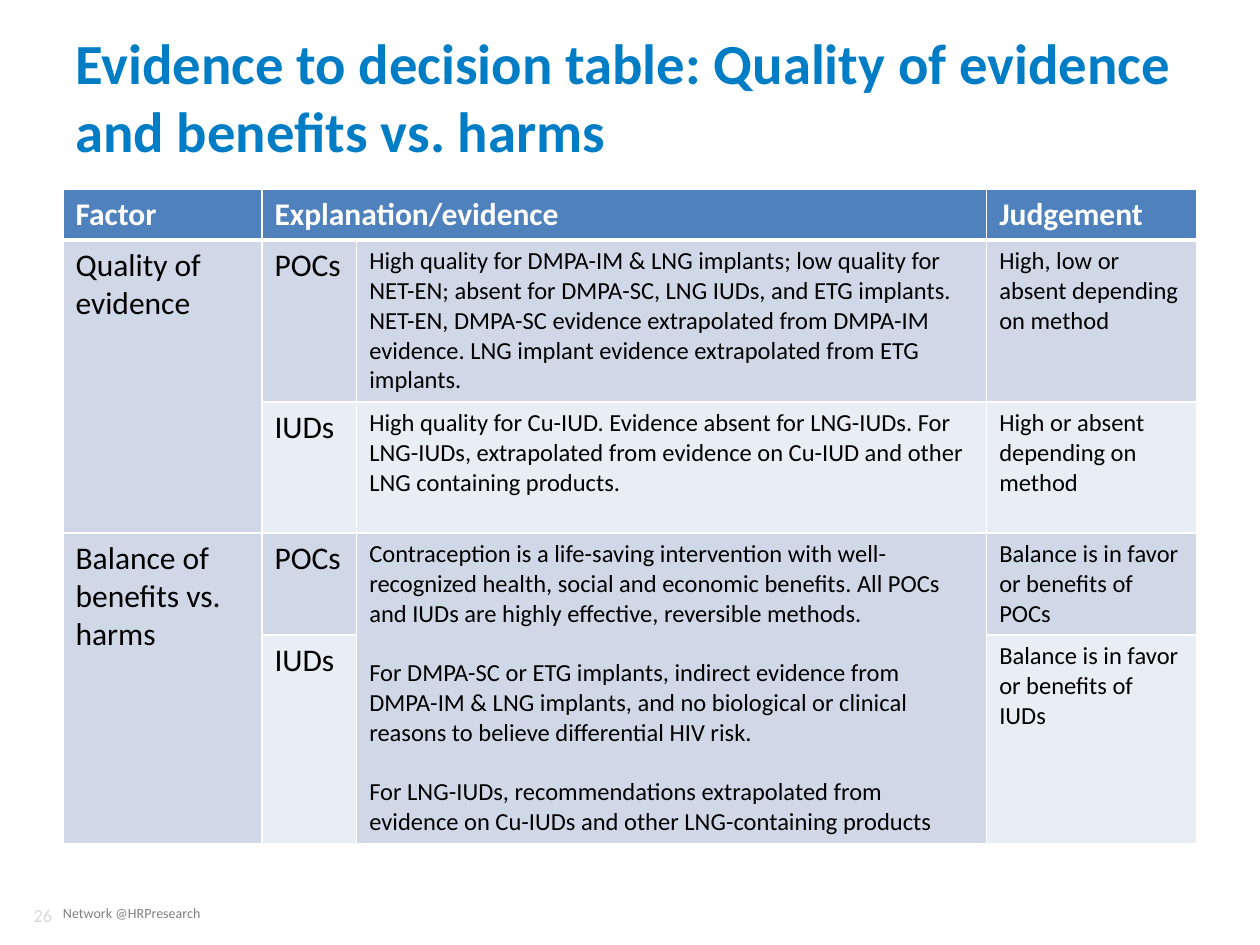
from lxml import etree
from pptx import Presentation
from pptx import util as u
from pptx.dml.color import RGBColor
from pptx.enum import text as t
from pptx.oxml import ns

TITLE = "Evidence to decision table: Quality of evidence and benefits vs. harms"
PAGE_NUMBER = "26"
HANDLE = "Network @HRPresearch"
HEADINGS = ["Factor", "Explanation/evidence", None, "Judgement"]
FINDINGS = [
    ["Quality of evidence", "POCs",
     "High quality for DMPA-IM & LNG implants; low quality for NET-EN; absent for DMPA-SC, "
     "LNG IUDs, and ETG implants. NET-EN, DMPA-SC evidence extrapolated from DMPA-IM evidence. "
     "LNG implant evidence extrapolated from ETG implants.",
     "High, low or absent depending on method"],
    [None, "IUDs",
     "High quality for Cu-IUD. Evidence absent for LNG-IUDs. For LNG-IUDs, extrapolated from "
     "evidence on Cu-IUD and other LNG containing products.",
     "High or absent depending on method"],
    ["Balance of benefits vs. harms", "POCs",
     "Contraception is a life-saving intervention with well-recognized health, social and "
     "economic benefits. All POCs and IUDs are highly effective, reversible methods.\n"
     "For DMPA-SC or ETG implants, indirect evidence from DMPA-IM & LNG implants, and no "
     "biological or clinical reasons to believe differential HIV risk.\n"
     "For LNG-IUDs, recommendations extrapolated from evidence on Cu-IUDs and other "
     "LNG-containing products",
     "Balance is in favor or benefits of POCs"],
    [None, "IUDs", None, "Balance is in favor or benefits of IUDs"],
]
MERGES = [((0, 1), (0, 2)), ((1, 0), (2, 0)), ((3, 0), (4, 0)), ((3, 2), (4, 2))]
COLUMN_WIDTHS = [4.01, 1.91, 12.7, 4.24]
ROW_HEIGHTS = [1.03, 3.26, 2.64, 2.06, 4.21]
HEADER_FILL, DARK_BAND, LIGHT_BAND = "4F81BD", "D0D8E8", "E9EDF4"


def rgb(value):
    return RGBColor.from_string(value)


def write(frame, content, size, color="000000", bold=False, align=t.PP_ALIGN.LEFT, gap=0):
    frame.word_wrap = True
    for index, line in enumerate(content.split("\n")):
        paragraph = frame.paragraphs[0] if index == 0 else frame.add_paragraph()
        paragraph.alignment = align
        if index:
            paragraph.space_before = u.Pt(gap)
        run = paragraph.add_run()
        run.text = line
        run.font.name = "Calibri"
        run.font.size = u.Pt(size)
        run.font.bold = bold
        run.font.color.rgb = rgb(color)


def add_label(slide, left, top, width, height, content, size,
              anchor=t.MSO_ANCHOR.MIDDLE, **style):
    frame = slide.shapes.add_textbox(u.Cm(left), u.Cm(top), u.Cm(width), u.Cm(height)).text_frame
    frame.vertical_anchor = anchor
    write(frame, content, size, **style)


def set_borders(cell, bottom):
    properties = cell._tc.get_or_add_tcPr()
    for side, points in (("L", 1), ("R", 1), ("T", 1), ("B", bottom)):
        line = etree.SubElement(properties, ns.qn(f"a:ln{side}"), w=str(u.Pt(points)))
        solid = etree.SubElement(line, ns.qn("a:solidFill"))
        etree.SubElement(solid, ns.qn("a:srgbClr"), val="FFFFFF")


def add_evidence_table(slide):
    rows = [HEADINGS] + FINDINGS
    table = slide.shapes.add_table(len(rows), len(HEADINGS), u.Cm(1.27), u.Cm(3.81),
                                   u.Cm(sum(COLUMN_WIDTHS)), u.Cm(sum(ROW_HEIGHTS))).table
    for column, width in zip(table.columns, COLUMN_WIDTHS):
        column.width = u.Cm(width)
    for row, height in zip(table.rows, ROW_HEIGHTS):
        row.height = u.Cm(height)
    for first, last in MERGES:
        table.cell(*first).merge(table.cell(*last))
    for r, row in enumerate(rows):
        for c, content in enumerate(row):
            cell = table.cell(r, c)
            header = r == 0
            set_borders(cell, 3 if header else 1)
            dark = r % 2 == 1 or content is None
            fill = HEADER_FILL if header else DARK_BAND if dark else LIGHT_BAND
            cell.fill.solid()
            cell.fill.fore_color.rgb = rgb(fill)
            if content:
                write(cell.text_frame, content, 18 if header or c < 2 else 14,
                      color="FFFFFF" if header else "000000", bold=header, gap=17)


def main():
    deck = Presentation()
    deck.slide_width, deck.slide_height = u.Cm(25.4), u.Cm(19.05)
    slide = deck.slides.add_slide(deck.slide_layouts[6])
    add_label(slide, 0.3, 18.14, 1, 0.6, PAGE_NUMBER, 10.5,
              color="D9D9D9", align=t.PP_ALIGN.RIGHT)
    add_label(slide, 1.02, 18.11, 3.6, 0.6, HANDLE, 8, anchor=t.MSO_ANCHOR.TOP, color="808080")
    add_label(slide, 1.27, 0.76, 22.86, 2.36, TITLE, 32.4, color="007DC5", bold=True)
    add_evidence_table(slide)
    deck.save("out.pptx")


if __name__ == "__main__":
    main()
